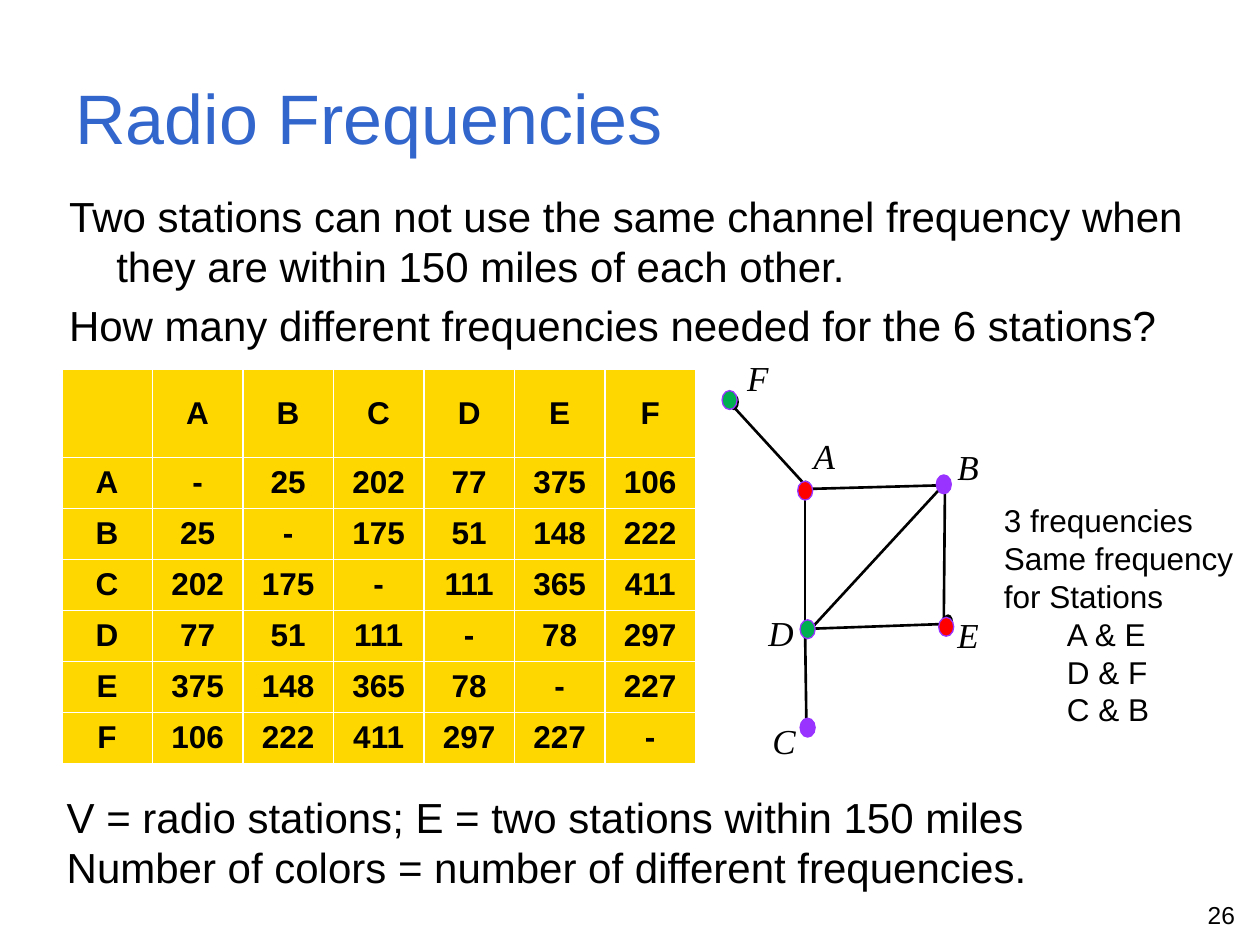
from lxml import etree
from pptx import Presentation
from pptx.dml.color import RGBColor
from pptx.enum.shapes import MSO_CONNECTOR as CONN, MSO_SHAPE as SHAPE
from pptx.enum.text import MSO_ANCHOR as ANCHOR, PP_ALIGN as ALIGN
from pptx.oxml.ns import qn
from pptx.util import Pt

COLORS = {"black": "000000", "title": "3366CC", "gold": "FFD700",
          "green": "00B050", "red": "FF0000", "purple": "9933FF"}
STATIONS = "ABCDEF"
DISTANCES = [
    ["-", 25, 202, 77, 375, 106],
    [25, "-", 175, 51, 148, 222],
    [202, 175, "-", 111, 365, 411],
    [77, 51, 111, "-", 78, 297],
    [375, 148, 365, 78, "-", 227],
    [106, 222, 411, 297, 227, "-"],
]
# Station: (colour, coloured dot, black dot, label, label width),
# positions relative to the graph box
NODES = {
    "F": ("green", (0.6, 23.2), (4.9, 25.4), (7.8, 0.2), 22.3),
    "D": ("green", (45.2, 154.2), (45.9, 155), (20, 145.6), 29.5),
    "A": ("red", (43.8, 75), (45.9, 75), (45.9, 44.8), 26.6),
    "E": ("red", (124.4, 152.8), (127.3, 151.4), (128, 147), 26.6),
    "B": ("purple", (123, 71.4), (125.1, 72.2), (128, 51.3), 26.6),
    "C": ("purple", (45.2, 210.4), (45.9, 211.1), (22.2, 207.5), 28.1),
}
EDGES = [  # B-A, F-A, E-B, E-D, D-A, C-D, B-D
    (130.2, 77.2, 50.2, 79.4), (2, 26.8, 50.2, 79.4),
    (127.3, 156.4, 128, 76.5), (132.3, 156.4, 51, 159.3),
    (48.1, 155, 48.1, 83.7), (48.8, 214, 48.1, 163.6),
    (125.8, 78.6, 49.5, 161.4),
]


def rgb(name):
    return RGBColor.from_string(COLORS[name])


def write(tf, text, size=18, font="Arial", color="black", bold=False,
          italic=False, align=None, before=None, indents=()):
    """One paragraph per line of text; a vertical tab breaks a line inside it."""
    for i, line in enumerate(text.split("\n")):
        p = tf.paragraphs[0] if i == 0 else tf.add_paragraph()
        p.text = line
        p.alignment = align
        if before is not None:
            p.space_before = Pt(before)
        if i < len(indents):
            left, first = indents[i]
            pPr = p._p.get_or_add_pPr()
            pPr.set("marL", str(Pt(left)))
            pPr.set("indent", str(Pt(first)))
        for r in p.runs:
            f = r.font
            f.name, f.size, f.bold, f.italic = font, Pt(size), bold, italic
            f.color.rgb = rgb(color)


def add_text(slide, box, text, wrap=True, anchor=ANCHOR.TOP, **fmt):
    tf = slide.shapes.add_textbox(*map(Pt, box)).text_frame
    tf.word_wrap, tf.vertical_anchor = wrap, anchor
    write(tf, text, **fmt)


def add_dot(slide, kind, box, fill, line):
    sp = slide.shapes.add_shape(kind, *map(Pt, box))
    sp.shadow.inherit = False
    sp.fill.solid()
    sp.fill.fore_color.rgb = rgb(fill)
    sp.line.color.rgb = rgb(line)
    sp.line.width = Pt(0.75)


def add_distance_table(slide, box):
    x, y, w, h = box
    header_h = 50.4
    n = len(STATIONS)
    frame = slide.shapes.add_table(n + 1, n + 1, Pt(x), Pt(y), Pt(w), Pt(h))
    table = frame.table
    table.first_row = table.horz_banding = False
    for col in table.columns:
        col.width = Pt(w / (n + 1))
    for i, row in enumerate(table.rows):
        row.height = Pt((h - header_h) / n if i else header_h)
    rows = [["", *STATIONS]] + [[s, *d] for s, d in zip(STATIONS, DISTANCES)]
    for i, values in enumerate(rows):
        for j, value in enumerate(values):
            cell = table.cell(i, j)
            cell.fill.solid()
            cell.fill.fore_color.rgb = rgb("gold")
            cell.vertical_anchor = ANCHOR.MIDDLE
            cell.margin_left = cell.margin_right = Pt(3.6)
            cell.margin_top = cell.margin_bottom = Pt(3.6)
            write(cell.text_frame, str(value), bold=True, align=ALIGN.CENTER)


def add_station_graph(slide, box):
    x, y = box[:2]
    # Black vertex dots
    for _, _, (dx, dy), _, _ in NODES.values():
        add_dot(slide, SHAPE.FLOWCHART_CONNECTOR,
                (x + dx, y + dy, 5, 8.6), "black", "black")
    # Edges
    for x1, y1, x2, y2 in EDGES:
        line = slide.shapes.add_connector(
            CONN.STRAIGHT, Pt(x + x1), Pt(y + y1), Pt(x + x2), Pt(y + y2))
        line.line.color.rgb = rgb("black")
        line.line.width = Pt(1.5)
        etree.SubElement(line._element.spPr, qn("a:effectLst"))
    # Labels and coloured dots
    for name, (color, (cx, cy), _, (lx, ly), w) in NODES.items():
        add_text(slide, (x + lx, y + ly, w, 31.5), name, wrap=False,
                 size=20, font="Times New Roman", italic=True)
        add_dot(slide, SHAPE.OVAL, (x + cx, y + cy, 8.6, 10.8),
                color, "purple")


def main():
    prs = Presentation()
    prs.slide_width, prs.slide_height = Pt(720), Pt(540)
    slide = prs.slides.add_slide(prs.slide_layouts[6])

    # Slide number and title
    add_text(slide, (545, 510.5, 167.8, 22.3), "26", size=14,
             align=ALIGN.RIGHT)
    add_text(slide, (36, 21.6, 648, 90), "Radio Frequencies", size=40,
             color="title", anchor=ANCHOR.MIDDLE)

    add_distance_table(slide, (35.3, 211, 362.2, 225.4))

    # Problem statement
    add_text(slide, (32.4, 105.1, 667.4, 136.1),
             "Two stations can not use the same channel frequency when "
             "they are within 150 miles of each other.\n"
             "How many different frequencies needed for the 6 stations?",
             size=24, before=4.8, indents=[(27, -27)] * 2)

    add_station_graph(slide, (412, 200, 160, 240))

    # Model and answer
    add_text(slide, (31, 448.6, 575.3, 65.5),
             "V = radio stations; E = two stations within 150 miles\v"
             "Number of colors = number of different frequencies.",
             size=24, wrap=False)
    add_text(slide, (566.6, 283, 146.9, 138.2),
             "3 frequencies\nSame frequency\nfor Stations\n"
             "A & E\nD & F\vC & B",
             wrap=False, indents=[(0, 0)] * 3 + [(36, 0)] * 2)

    prs.save("out.pptx")


if __name__ == "__main__":
    main()
